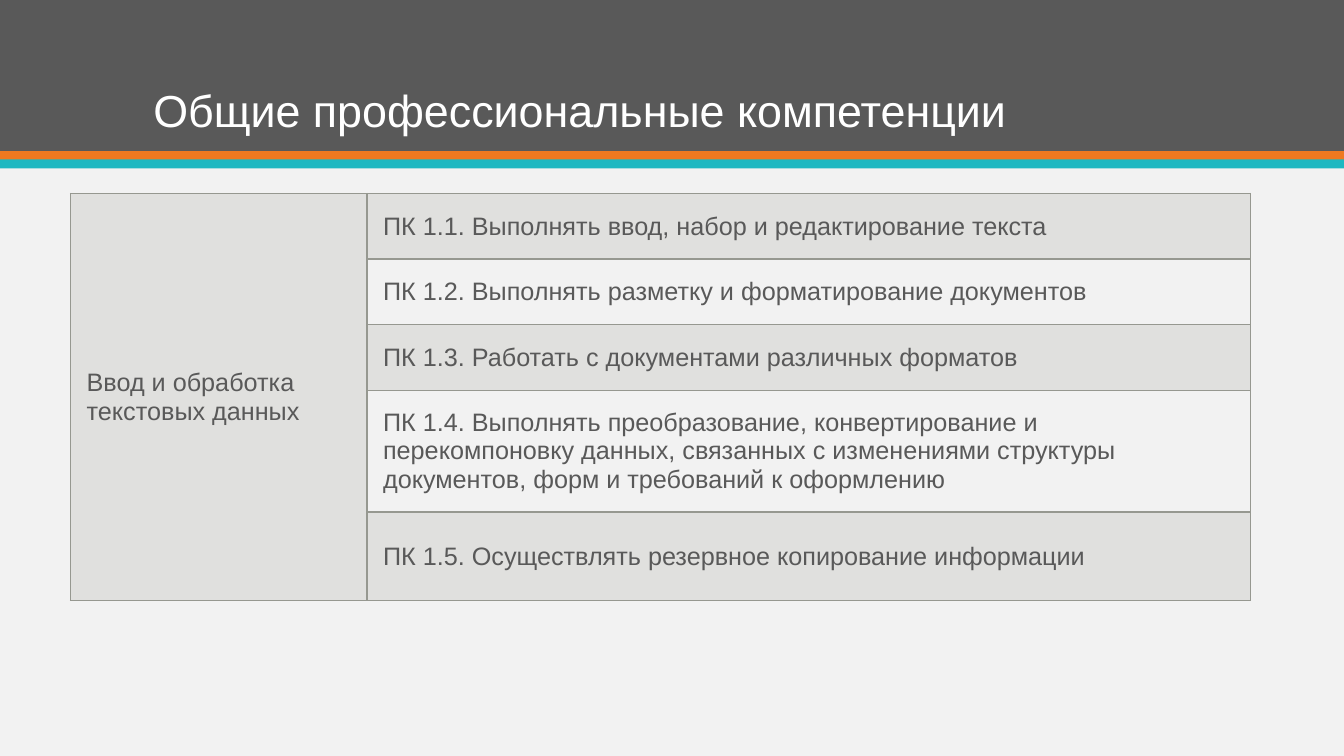
from lxml import etree
from pptx import Presentation
from pptx.dml.color import RGBColor
from pptx.enum.shapes import MSO_SHAPE
from pptx.enum.text import MSO_ANCHOR, MSO_AUTO_SIZE, PP_ALIGN
from pptx.oxml.ns import qn
from pptx.util import Inches, Pt

RECTANGLE = MSO_SHAPE.RECTANGLE
MIDDLE, BOTTOM = MSO_ANCHOR.MIDDLE, MSO_ANCHOR.BOTTOM
LEFT = PP_ALIGN.LEFT
NO_AUTOFIT = MSO_AUTO_SIZE.NONE

# Content
TITLE = "Общие профессиональные компетенции"
ACTIVITY = "Ввод и обработка текстовых данных"
# Competence and row height in inches
COMPETENCES = [
    ("ПК 1.1. Выполнять ввод, набор и редактирование текста", 0.65),
    ("ПК 1.2. Выполнять разметку и форматирование документов", 0.65),
    ("ПК 1.3. Работать с документами различных форматов", 0.65),
    ("ПК 1.4. Выполнять преобразование, конвертирование и перекомпоновку "
     "данных, связанных с изменениями структуры документов, форм и "
     "требований к оформлению", 1.21),
    ("ПК 1.5. Осуществлять резервное копирование информации", 0.87),
]

# Style
FONT = "Arial"
COLORS = {
    "background": "F2F2F2",
    "dark": "595959",
    "orange": "EF7920",
    "teal": "1EB8C1",
    "white": "FFFFFF",
    "border": "969890",
    "shade": "E0E0DE",
}
BANDS = [("dark", 0, 1.5), ("orange", 1.5, 0.09), ("teal", 1.58, 0.09)]
SLIDE_WIDTH, SLIDE_HEIGHT = 13.33, 7.5
COLUMN_WIDTHS = [2.94, 8.76]
CELL_MARGIN = Inches(0.16)


def rgb(name):
    return RGBColor.from_string(COLORS[name])


def write(text_frame, text, size, color):
    paragraph = text_frame.paragraphs[0]
    paragraph.alignment = LEFT
    run = paragraph.add_run()
    run.text = text
    run.font.name = FONT
    run.font.size = Pt(size)
    run.font.color.rgb = rgb(color)
    return paragraph


def add_borders(cell):
    properties = cell._tc.get_or_add_tcPr()
    for side in ("a:lnL", "a:lnR", "a:lnT", "a:lnB"):
        line = etree.SubElement(properties, qn(side), w=str(Pt(1)))
        fill = etree.SubElement(line, qn("a:solidFill"))
        etree.SubElement(fill, qn("a:srgbClr"), val=COLORS["border"])


def format_cell(cell, shaded):
    add_borders(cell)
    cell.vertical_anchor = MIDDLE
    cell.margin_left = cell.margin_right = CELL_MARGIN
    cell.margin_top = cell.margin_bottom = CELL_MARGIN
    if shaded:
        cell.fill.solid()
        cell.fill.fore_color.rgb = rgb("shade")
    else:
        cell.fill.background()


def add_bands(slide):
    for color, top, height in BANDS:
        band = slide.shapes.add_shape(
            RECTANGLE, 0, Inches(top), Inches(SLIDE_WIDTH), Inches(height))
        band.shadow.inherit = False
        band.fill.solid()
        band.fill.fore_color.rgb = rgb(color)
        band.line.fill.background()


def add_title(slide):
    title = slide.shapes.title
    title.left, title.top = Inches(1.42), Inches(0.28)
    title.width, title.height = Inches(10.5), Inches(1.13)
    text_frame = title.text_frame
    text_frame.auto_size = NO_AUTOFIT
    text_frame.vertical_anchor = BOTTOM
    write(text_frame, TITLE, 32, "white").line_spacing = 0.9
    # Bring the title in front of the bands
    slide.shapes._spTree.append(title._element)


def add_competence_table(slide):
    height = sum(row_height for _, row_height in COMPETENCES)
    table = slide.shapes.add_table(
        len(COMPETENCES), len(COLUMN_WIDTHS), Inches(0.7), Inches(1.92),
        Inches(sum(COLUMN_WIDTHS)), Inches(height)).table
    table.first_row = table.horz_banding = False
    for column, width in zip(table.columns, COLUMN_WIDTHS):
        column.width = Inches(width)

    # Competences with every other row shaded
    for index, (competence, row_height) in enumerate(COMPETENCES):
        table.rows[index].height = Inches(row_height)
        activity_cell, competence_cell = table.rows[index].cells
        format_cell(activity_cell, True)
        format_cell(competence_cell, index % 2 == 0)
        write(competence_cell.text_frame, competence, 18, "dark")

    # Activity spanning all rows
    table.cell(0, 0).merge(table.cell(len(COMPETENCES) - 1, 0))
    write(table.cell(0, 0).text_frame, ACTIVITY, 18, "dark")


def main():
    presentation = Presentation()
    presentation.slide_width = Inches(SLIDE_WIDTH)
    presentation.slide_height = Inches(SLIDE_HEIGHT)
    slide = presentation.slides.add_slide(presentation.slide_layouts[5])
    slide.background.fill.solid()
    slide.background.fill.fore_color.rgb = rgb("background")
    add_bands(slide)
    add_title(slide)
    add_competence_table(slide)
    presentation.save("out.pptx")


if __name__ == "__main__":
    main()
